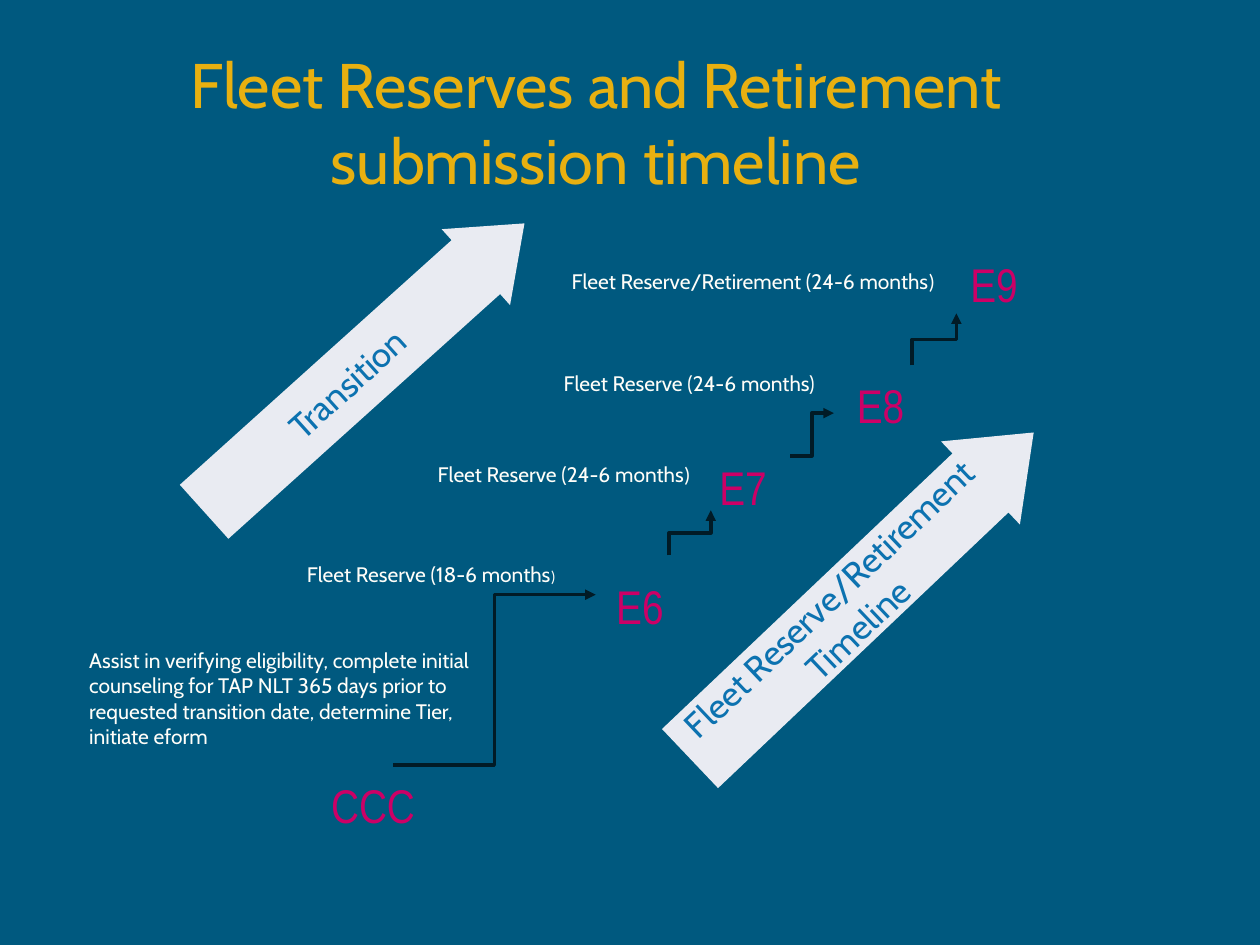
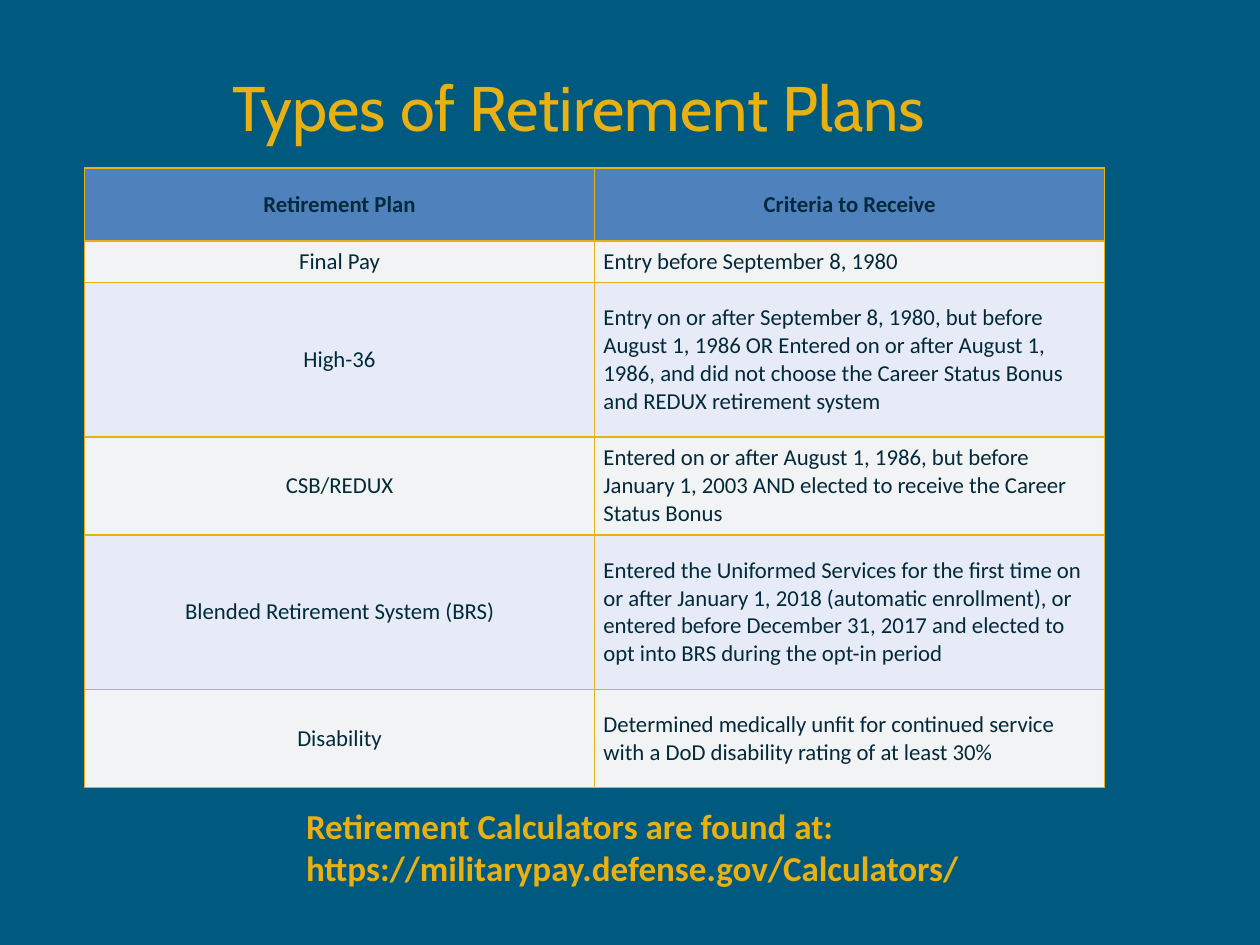
"""Build two slides on reserve and retirement planning."""
import lxml.etree
import pptx
import pptx.dml.color
import pptx.enum.shapes
import pptx.enum.text
import pptx.oxml
import pptx.oxml.ns
import pptx.util

Cm = pptx.util.Cm
Pt = pptx.util.Pt
RGB = pptx.dml.color.RGBColor
ALIGN = pptx.enum.text.PP_ALIGN
ANCHOR = pptx.enum.text.MSO_ANCHOR
qn = pptx.oxml.ns.qn

BACKGROUND = RGB(0x00, 0x59, 0x7F)
GOLD = RGB(0xE8, 0xB0, 0x10)
CREAM = RGB(0xFF, 0xFE, 0xF9)
MAGENTA = RGB(0xCC, 0x00, 0x66)
ARROW_FILL = RGB(0xE9, 0xEB, 0xF2)
ARROW_TEXT = RGB(0x0C, 0x72, 0xB0)
STEP_LINE = RGB(0x01, 0x1B, 0x26)
TABLE_TEXT = RGB(0x02, 0x2A, 0x3A)
HEADER_FILL = RGB(0x4F, 0x81, 0xBD)
ROW_FILLS = RGB(0xF2, 0xF3, 0xF4), RGB(0xE7, 0xEB, 0xF7)

RANKS = [("CCC", 4.52, 10.49), ("E6", 9.9, 6.48), ("E7", 11.98, 4.09),
         ("E8", 14.75, 2.44), ("E9", 17.04, 0)]
STEPS = [(6.12, 10.39, 10.21, 6.96, False), (11.69, 6.17, 12.53, 5.26, True),
         (14.13, 4.16, 15.01, 3.3, False), (16.59, 2.34, 17.48, 1.29, True)]
NOTES = [("Fleet Reserve (18-6 months", "Calibri", 9, 1.5, 6.3, 7.9),
         ("Fleet Reserve (24-6 months", "Calibri", 12, 1.35, 4.27, 10.77),
         ("Fleet Reserve (24-6 months", "Cabin", 12, 7.04, 2.44, 7.59),
         ("Fleet Reserve/Retirement (24-6 months", "Calibri", 12, 8.79, 0.38, 8.26)]
ASSIST = ("Assist in verifying eligibility, complete initial counseling for TAP NLT 365 days "
          "prior to requested transition date, determine Tier, initiate eform")
PLANS = [
    ("Retirement Plan", "Criteria to Receive", 1.47),
    ("Final Pay", "Entry before September 8, 1980", 0.83),
    ("High-36", "Entry on or after September 8, 1980, but before August 1, 1986 OR Entered on or "
     "after August 1, 1986, and did not choose the Career Status Bonus and REDUX retirement "
     "system", 3.12),
    ("CSB/REDUX", "Entered on or after August 1, 1986, but before January 1, 2003 AND elected to "
     "receive the Career Status Bonus", 1.97),
    ("Blended Retirement System (BRS)", "Entered the Uniformed Services for the first time on or "
     "after January 1, 2018 (automatic enrollment), or entered before December 31, 2017 and "
     "elected to opt into BRS during the opt-in period", 3.12),
    ("Disability", "Determined medically unfit for continued service with a DoD disability "
     "rating of at least 30%", 1.97),
]
CALCULATORS = ("Retirement Calculators are found at: "
               "https://militarypay.defense.gov/Calculators/")


def style(font, name, size, color, bold=False):
    """Set the face, size, colour and weight of a font."""
    font.name, font.size, font.bold = name, Pt(size), bold
    font.color.rgb = color


def place(sp, left, top, width, height):
    """Move and size a shape, in centimetres."""
    sp.left, sp.top, sp.width, sp.height = Cm(left), Cm(top), Cm(width), Cm(height)


def add_titled_slide(prs, title, left, top, width, height, spacing=1.0):
    """Add a slide with the shared gold title."""
    slide = prs.slides.add_slide(prs.slide_layouts.get_by_name("Title Only"))
    sp = slide.shapes.title
    place(sp, left, top, width, height)
    tf = sp.text_frame
    tf.text = title
    tf.auto_size = pptx.enum.text.MSO_AUTO_SIZE.NONE
    tf.vertical_anchor = ANCHOR.MIDDLE
    p = tf.paragraphs[0]
    p.alignment, p.line_spacing = ALIGN.CENTER, spacing
    style(p.font, "Cabin", 36, GOLD)
    return slide


def add_text(slide, text, left, top, width, height, wrap=True, inset=True):
    """Add a text box and return its paragraph."""
    tf = slide.shapes.add_textbox(Cm(left), Cm(top), Cm(width), Cm(height)).text_frame
    tf.word_wrap = wrap
    if not inset:
        tf.margin_left = tf.margin_top = tf.margin_right = tf.margin_bottom = 0
    p = tf.paragraphs[0]
    p.text = text
    return p


def add_step(slide, x1, y1, x2, y2, vertical):
    """Add an elbow arrow that leaves its start sideways or upwards."""
    if vertical:
        cx, cy = (x1 + x2) / 2, (y1 + y2) / 2
        dx, dy = (y1 - y2) / 2, (x2 - x1) / 2
        x1, y1, x2, y2 = cx + dx, cy + dy, cx - dx, cy - dy
    sp = slide.shapes.add_connector(pptx.enum.shapes.MSO_CONNECTOR.ELBOW,
                                    Cm(x1), Cm(y1), Cm(x2), Cm(y2))
    sp.line.color.rgb, sp.line.width = STEP_LINE, Pt(2)
    props = sp._element.spPr
    if vertical:
        props.find(qn("a:xfrm")).set("rot", "5400000")
    lxml.etree.SubElement(props.find(qn("a:ln")), qn("a:tailEnd"), type="triangle")
    lxml.etree.SubElement(props, qn("a:effectLst"))


def add_staircase(slide, left, top):
    """Draw the climb from CCC to E9 with the note for every step."""
    p = add_text(slide, ASSIST, left, top + 8.03, 7.72, 2.06, inset=False)
    style(p.font, "Cabin", 12, CREAM)
    for text, face, size, x, y, width in NOTES:
        p = add_text(slide, "", left + x, top + y, width, 0.51, inset=False)
        p.alignment = ALIGN.RIGHT
        for part, name, points in ((text, "Cabin", 12), (")", face, size)):
            r = p.add_run()
            r.text = part
            style(r.font, name, points, CREAM)
    for x1, y1, x2, y2, vertical in STEPS:
        add_step(slide, left + x1, top + y1, left + x2, top + y2, vertical)
    for rank, x, y in RANKS:
        p = add_text(slide, rank, left + x, top + y, 2.4, 1.02, wrap=False)
        p.alignment = ALIGN.CENTER
        style(p.font, "Arial Narrow", 27, MAGENTA)


def add_rising_arrow(slide, text, left, top, width, height, rotation):
    """Draw a wide labelled arrow that points up to the right."""
    sp = slide.shapes.add_shape(pptx.enum.shapes.MSO_SHAPE.RIGHT_ARROW,
                                Cm(left), Cm(top), Cm(width), Cm(height))
    sp.adjustments[0], sp.adjustments[1] = 0.71, 0.64
    sp.rotation = rotation
    sp.shadow.inherit = False
    sp.fill.solid()
    sp.fill.fore_color.rgb = ARROW_FILL
    sp.line.fill.background()
    tf = sp.text_frame
    tf.text, tf.word_wrap, tf.vertical_anchor = text, True, ANCHOR.MIDDLE
    p = tf.paragraphs[0]
    p.alignment = ALIGN.CENTER
    style(p.font, "Cabin", 20, ARROW_TEXT)


def format_cell(cell, text, fill, centered, bold):
    """Fill one table cell and give it gold borders."""
    cell.text, cell.vertical_anchor = text, ANCHOR.MIDDLE
    cell.margin_left = cell.margin_right = Cm(0.18)
    cell.margin_top = cell.margin_bottom = Cm(0.13)
    props = cell._tc.get_or_add_tcPr()
    for side in ("a:lnL", "a:lnR", "a:lnT", "a:lnB"):
        ln = lxml.etree.SubElement(props, qn(side), w=str(Pt(1)))
        solid = lxml.etree.SubElement(ln, qn("a:solidFill"))
        lxml.etree.SubElement(solid, qn("a:srgbClr"), val=str(GOLD))
    cell.fill.solid()
    cell.fill.fore_color.rgb = fill
    p = cell.text_frame.paragraphs[0]
    p.alignment = ALIGN.CENTER if centered else ALIGN.LEFT
    style(p.font, "Calibri", 13, TABLE_TEXT, bold)


def add_plan_table(slide, left, top, width):
    """Add the table of plans and their criteria."""
    height = sum(plan[2] for plan in PLANS)
    table = slide.shapes.add_table(len(PLANS), 2, Cm(left), Cm(top),
                                   Cm(width), Cm(height)).table
    table.horz_banding = False
    for i, (plan, criteria, row_height) in enumerate(PLANS):
        table.rows[i].height = Cm(row_height)
        header = i == 0
        fill = HEADER_FILL if header else ROW_FILLS[(i - 1) % 2]
        format_cell(table.cell(i, 0), plan, fill, True, header)
        format_cell(table.cell(i, 1), criteria, fill, header, header)


def build_timeline(prs):
    """Build the submission timeline slide."""
    slide = add_titled_slide(prs, "Fleet Reserves and Retirement submission timeline",
                             3.15, 0.91, 17.73, 3.07)
    add_rising_arrow(slide, "Transition", 3, 6.38, 8.69, 2.06, 318)
    add_rising_arrow(slide, "Fleet Reserve/Retirement Timeline", 12.6, 10.85, 9.55, 2.31, 316.5)
    add_staircase(slide, 1.8, 5.03)


def build_plans(prs):
    """Build the retirement plans slide."""
    slide = add_titled_slide(prs, "Types of Retirement Plans", 0.64, 0.64, 22.05, 3.18, 0.9)
    add_plan_table(slide, 1.7, 3.39, 20.57)
    p = add_text(slide, CALCULATORS, 5.92, 16.09, 14.38, 1.96)
    style(p.font, "Calibri", 20, GOLD, True)


def main():
    """Build and save the presentation."""
    prs = pptx.Presentation()
    prs.slide_width, prs.slide_height = Cm(25.4), Cm(19.05)
    fill = prs.slide_master.background.fill
    fill.solid()
    fill.fore_color.rgb = BACKGROUND
    build_timeline(prs)
    build_plans(prs)
    prs.save("out.pptx")


if __name__ == "__main__":
    main()
